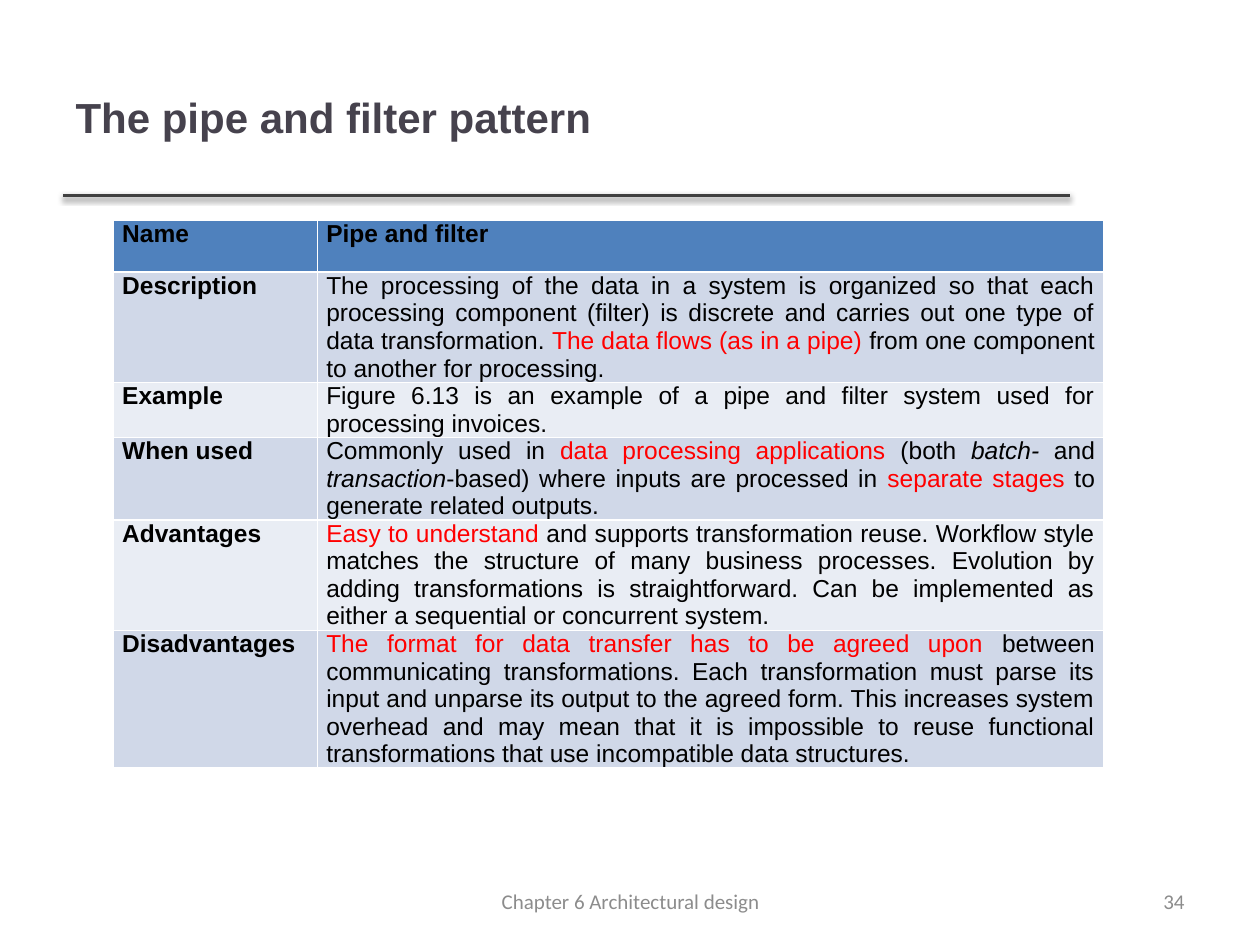
from lxml.etree import SubElement
from pptx import Presentation
from pptx.dml.color import RGBColor
from pptx.enum.text import MSO_ANCHOR, PP_ALIGN
from pptx.oxml.ns import qn
from pptx.util import Inches, Pt

BLACK = RGBColor(0x00, 0x00, 0x00)
RED = RGBColor(0xFF, 0x00, 0x00)
TITLE_GRAY = RGBColor(0x46, 0x42, 0x4D)
RULE_GRAY = RGBColor(0x40, 0x40, 0x40)
FOOTER_GRAY = RGBColor(0x8C, 0x8C, 0x8C)
HEADER_BLUE = RGBColor(0x4F, 0x81, 0xBD)
BANDS = (RGBColor(0xE9, 0xED, 0xF4), RGBColor(0xD0, 0xD8, 0xE8))

TITLE_FONT = {"name": "Arial", "size": Pt(24), "bold": True, "color": TITLE_GRAY}
BODY_FONT = {"name": "Arial", "size": Pt(14), "bold": False, "color": BLACK}
FOOTER_FONT = {"name": "Calibri", "size": Pt(12), "color": FOOTER_GRAY}
LABEL = {"bold": True}
KEY = {"color": RED}
ITALIC = {"italic": True}

PATTERN = [
    ("Name", [("Pipe and filter", LABEL)]),
    ("Description", [
        ("The processing of the data in a system is organized so that each processing "
         "component (filter) is discrete and carries out one type of data transformation. ", {}),
        ("The data flows (as in a pipe) ", KEY),
        ("from one component to another for processing. ", {})]),
    ("Example", [
        ("Figure 6.13 is an example of a pipe and filter system used for "
         "processing invoices.", {})]),
    ("When used", [
        ("Commonly used in ", {}),
        ("data processing applications ", KEY),
        ("(both ", {}),
        ("batch-", ITALIC),
        (" and ", {}),
        ("transaction", ITALIC),
        ("-based) where inputs are processed in ", {}),
        ("separate stages ", KEY),
        ("to generate related outputs.", {})]),
    ("Advantages", [
        ("Easy to understand", KEY),
        (" and supports transformation reuse. Workflow style matches the structure of many "
         "business processes. Evolution by adding transformations is straightforward. Can be "
         "implemented as either a sequential or concurrent system.", {})]),
    ("Disadvantages", [
        ("The format for data transfer has to be agreed upon ", KEY),
        ("between communicating transformations. Each transformation must parse its input and "
         "unparse its output to the agreed form. This increases system overhead and may mean "
         "that it is impossible to reuse functional transformations that use incompatible "
         "data structures.", {})]),
]


def write_runs(paragraph, runs, base, align):
    """Write (text, format) runs on top of a base format."""
    paragraph.alignment = align
    for text, changes in runs:
        run = paragraph.add_run()
        run.text = text
        for attribute, value in {**base, **changes}.items():
            if attribute == "color":
                run.font.color.rgb = value
            else:
                setattr(run.font, attribute, value)


def place(shape, box):
    """Move a shape to a box of left, top, width and height."""
    for attribute, value in zip(("left", "top", "width", "height"), box):
        setattr(shape, attribute, value)


def add_title(slide, box, text):
    """Fill the title placeholder and draw the shadowed rule under it."""
    title = slide.shapes.title
    place(title, box)
    title.text_frame.vertical_anchor = MSO_ANCHOR.MIDDLE
    write_runs(title.text_frame.paragraphs[0], [(text, {})], TITLE_FONT, PP_ALIGN.LEFT)

    left, top, width, height = box
    bottom = top + height
    rule = slide.shapes.add_connector(1, left, bottom, left + width, bottom)
    rule.line.color.rgb = RULE_GRAY
    rule.line.width = Pt(2)
    effects = SubElement(rule.line._get_or_add_ln().getparent(), qn("a:effectLst"))
    shadow = SubElement(effects, qn("a:outerShdw"), blurRad=str(Pt(3.1)),
                        dist=str(Pt(1.6)), dir="5400000", rotWithShape="0")
    color = SubElement(shadow, qn("a:srgbClr"), val="000000")
    SubElement(color, qn("a:alpha"), val="38000")


def add_pattern_table(slide, box, label_width):
    """Lay out the pattern as a header row and banded rows of label and text."""
    table = slide.shapes.add_table(len(PATTERN), 2, *box).table
    table.columns[0].width = label_width
    table.columns[1].width = box[2] - label_width
    margins = {"margin_left": Inches(0.07), "margin_right": Inches(0.07),
               "margin_top": 0, "margin_bottom": 0}
    for index, (label, runs) in enumerate(PATTERN):
        for column, content in enumerate(([(label, LABEL)], runs)):
            cell = table.cell(index, column)
            for attribute, value in margins.items():
                setattr(cell, attribute, value)
            cell.fill.solid()
            cell.fill.fore_color.rgb = BANDS[index % 2] if index else HEADER_BLUE
            write_runs(cell.text_frame.paragraphs[0], content, BODY_FONT, PP_ALIGN.JUSTIFY)


def add_footer(slide, box, text, align):
    """Write one footer text, centred vertically in its box."""
    frame = slide.shapes.add_textbox(*box).text_frame
    frame.word_wrap = True
    frame.vertical_anchor = MSO_ANCHOR.MIDDLE
    write_runs(frame.paragraphs[0], [(text, {})], FOOTER_FONT, align)


def main():
    """Build and save the slide."""
    deck = Presentation()
    deck.slide_width, deck.slide_height = Inches(10), Inches(7.5)
    slide = deck.slides.add_slide(deck.slide_layouts[5])
    add_title(slide, [Inches(n) for n in (0.5, 0.3, 7.99, 1.25)],
              "The pipe and filter pattern")
    add_pattern_table(slide, [Inches(n) for n in (0.9, 1.75, 7.86, 2.46)], Inches(1.62))
    add_footer(slide, [Inches(n) for n in (7.17, 6.95, 2.33, 0.4)], "34", PP_ALIGN.RIGHT)
    add_footer(slide, [Inches(n) for n in (3.42, 6.95, 3.17, 0.4)],
               "Chapter 6 Architectural design", PP_ALIGN.CENTER)
    deck.save("out.pptx")


if __name__ == "__main__":
    main()
